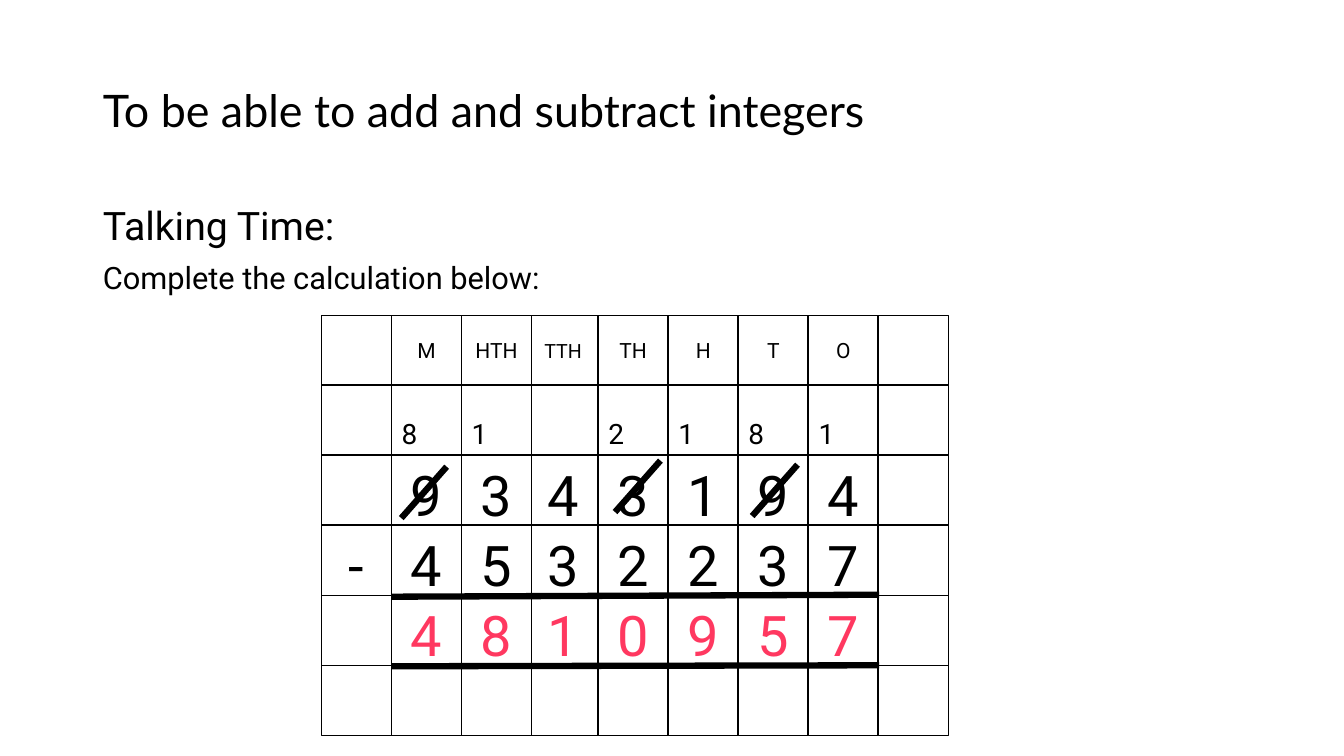
from lxml.etree import SubElement
from pptx import Presentation
from pptx.dml.color import RGBColor
from pptx.enum.shapes import MSO_CONNECTOR, MSO_SHAPE
from pptx.enum.text import MSO_ANCHOR, MSO_AUTO_SIZE, PP_ALIGN
from pptx.oxml.ns import qn
from pptx.util import Inches, Pt

BLACK, WHITE, ANSWER_PINK = "000000", "FFFFFF", "FF3860"
CELL, PITCH = 0.69, 0.695
GRID_LEFT, GRID_TOP = 3.19, 3.13
SHIFTED_COLUMN, SHIFT = 3, -0.035  # from TTH on, columns sit slightly further left

HEADING = dict(size=15, align=PP_ALIGN.CENTER, anchor=MSO_ANCHOR.MIDDLE)
CARRY = dict(size=20, align=PP_ALIGN.LEFT, anchor=MSO_ANCHOR.BOTTOM)
DIGIT = dict(size=40, align=PP_ALIGN.CENTER, anchor=MSO_ANCHOR.TOP)
ANSWER = dict(DIGIT, color=ANSWER_PINK)

CALCULATION = [
    (["", "M", "HTH", "TTH", "TH", "H", "T", "O", ""], HEADING),
    (["", "8", "1", "", "2", "1", "8", "1", ""], CARRY),
    (["", "9", "3", "4", "3", "1", "9", "4", ""], DIGIT),
    (["-", "4", "5", "3", "2", "2", "3", "7", ""], DIGIT),
    (["", "4", "8", "1", "0", "9", "5", "7", ""], ANSWER),
    ([""] * 9, DIGIT),
]
ANSWER_RULES = [(3.88, 5.92, 8.72, 5.9), (3.88, 6.61, 8.72, 6.6)]
STRIKES = [(3.98, 5.14), (6.1, 5.08), (7.46, 5.12)]


def rgb(color):
    return RGBColor.from_string(color)


def set_all(target, values):
    for attribute, value in values.items():
        setattr(target, attribute, value)


def write(paragraph, text, size, font="Roboto", color=BLACK, **layout):
    paragraph.text = text
    set_all(paragraph, layout)
    run_font = paragraph.runs[0].font
    set_all(run_font, dict(name=font, size=Pt(size)))
    run_font.color.rgb = rgb(color)


def place(placeholder, left, top, width, height, anchor):
    set_all(placeholder, dict(left=Inches(left), top=Inches(top),
                              width=Inches(width), height=Inches(height)))
    set_all(placeholder.text_frame, dict(word_wrap=True, vertical_anchor=anchor,
                                         auto_size=MSO_AUTO_SIZE.NONE))
    return placeholder.text_frame


def add_title(slide, text):
    frame = place(slide.shapes.title, 0.92, 0.4, 9.6, 1.45, MSO_ANCHOR.MIDDLE)
    write(frame.paragraphs[0], text, 32, font="Lato",
          alignment=PP_ALIGN.LEFT, line_spacing=0.9)


def add_instructions(slide, lines):
    frame = place(slide.placeholders[1], 0.92, 2, 11.5, 4.76, MSO_ANCHOR.TOP)
    for index, (text, size) in enumerate(lines):
        paragraph = frame.add_paragraph() if index else frame.paragraphs[0]
        properties = paragraph._p.get_or_add_pPr()
        properties.set("marL", "0")
        properties.set("indent", "0")
        SubElement(properties, qn("a:buNone"))
        write(paragraph, text, size, line_spacing=0.9,
              space_before=Pt(10 if index else 0))


def add_cell(slide, column, row, text, size, align, anchor, color=BLACK):
    left = GRID_LEFT + column * PITCH + (SHIFT if column >= SHIFTED_COLUMN else 0)
    cell = slide.shapes.add_shape(
        MSO_SHAPE.RECTANGLE, Inches(left), Inches(GRID_TOP + row * PITCH),
        Inches(CELL), Inches(CELL))
    cell.shadow.inherit = False
    cell.fill.solid()
    cell.fill.fore_color.rgb = rgb(WHITE)
    cell.line.color.rgb = rgb(BLACK)
    cell.line.width = Pt(1)
    if text:
        cell.text_frame.vertical_anchor = anchor
        write(cell.text_frame.paragraphs[0], text, size, color=color, alignment=align)


def add_calculation(slide):
    """Draw columns from right to left, so HTH overlaps the edge of TTH."""
    for column in reversed(range(9)):
        for row, (entries, style) in enumerate(CALCULATION):
            text = entries[column]
            fitted = dict(style, size=14) if text == "TTH" else style
            add_cell(slide, column, row, text, **fitted)


def add_thick_line(slide, *ends):
    stroke = slide.shapes.add_connector(MSO_CONNECTOR.STRAIGHT, *map(Inches, ends))
    stroke.line.color.rgb = rgb(BLACK)
    stroke.line.width = Pt(4.5)
    SubElement(stroke._element.spPr, qn("a:effectLst"))


def main():
    prs = Presentation()
    set_all(prs, dict(slide_width=Inches(13.33), slide_height=Inches(7.5)))
    slide = prs.slides.add_slide(prs.slide_layouts[1])
    add_title(slide, "To be able to add and subtract integers")
    add_instructions(slide, [("Talking Time:", 28),
                             ("Complete the calculation below:", 22)])
    add_calculation(slide)
    for ends in ANSWER_RULES:
        add_thick_line(slide, *ends)
    for left, bottom in STRIKES:
        add_thick_line(slide, left, bottom, left + 0.45, bottom - 0.51)
    prs.save("out.pptx")


if __name__ == "__main__":
    main()
